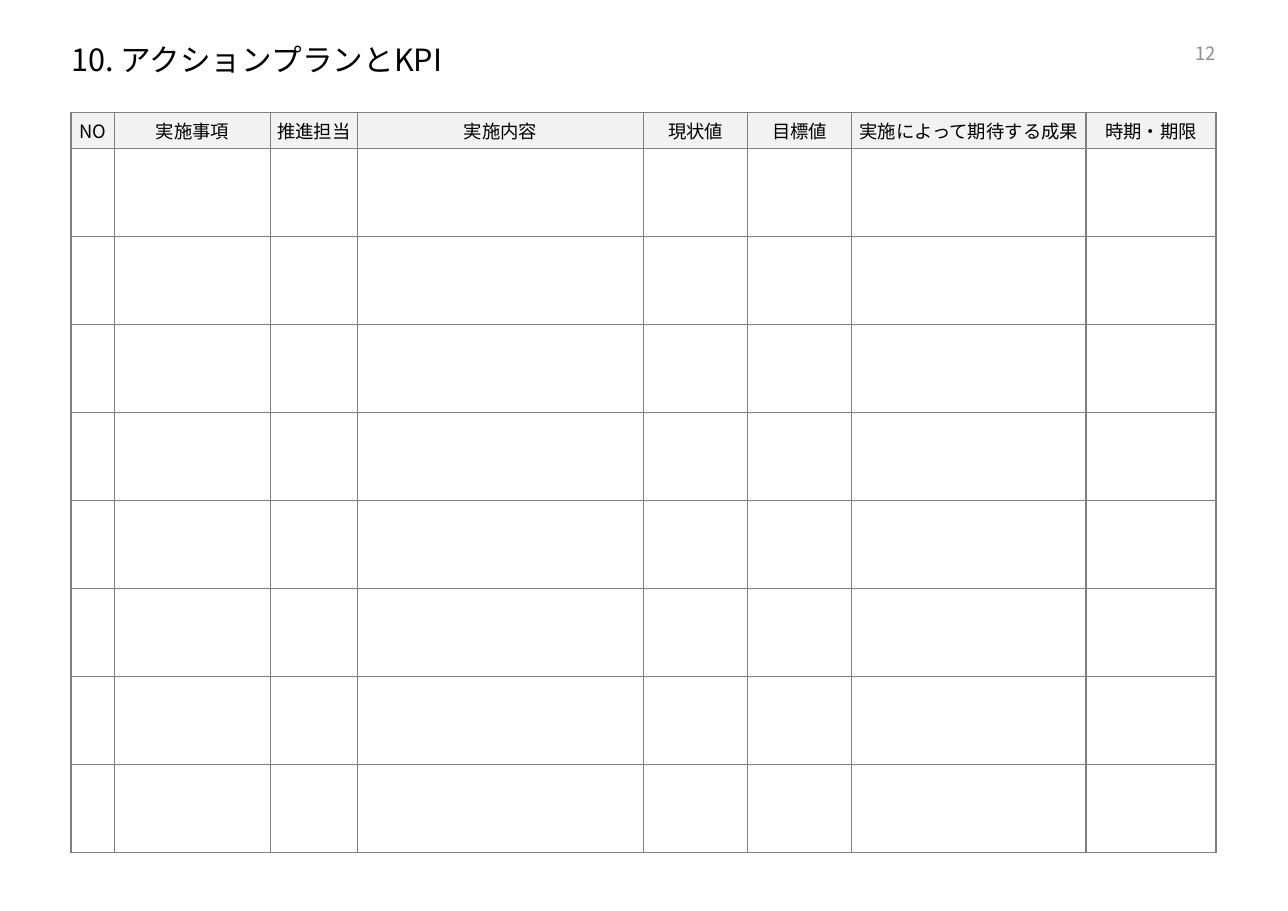
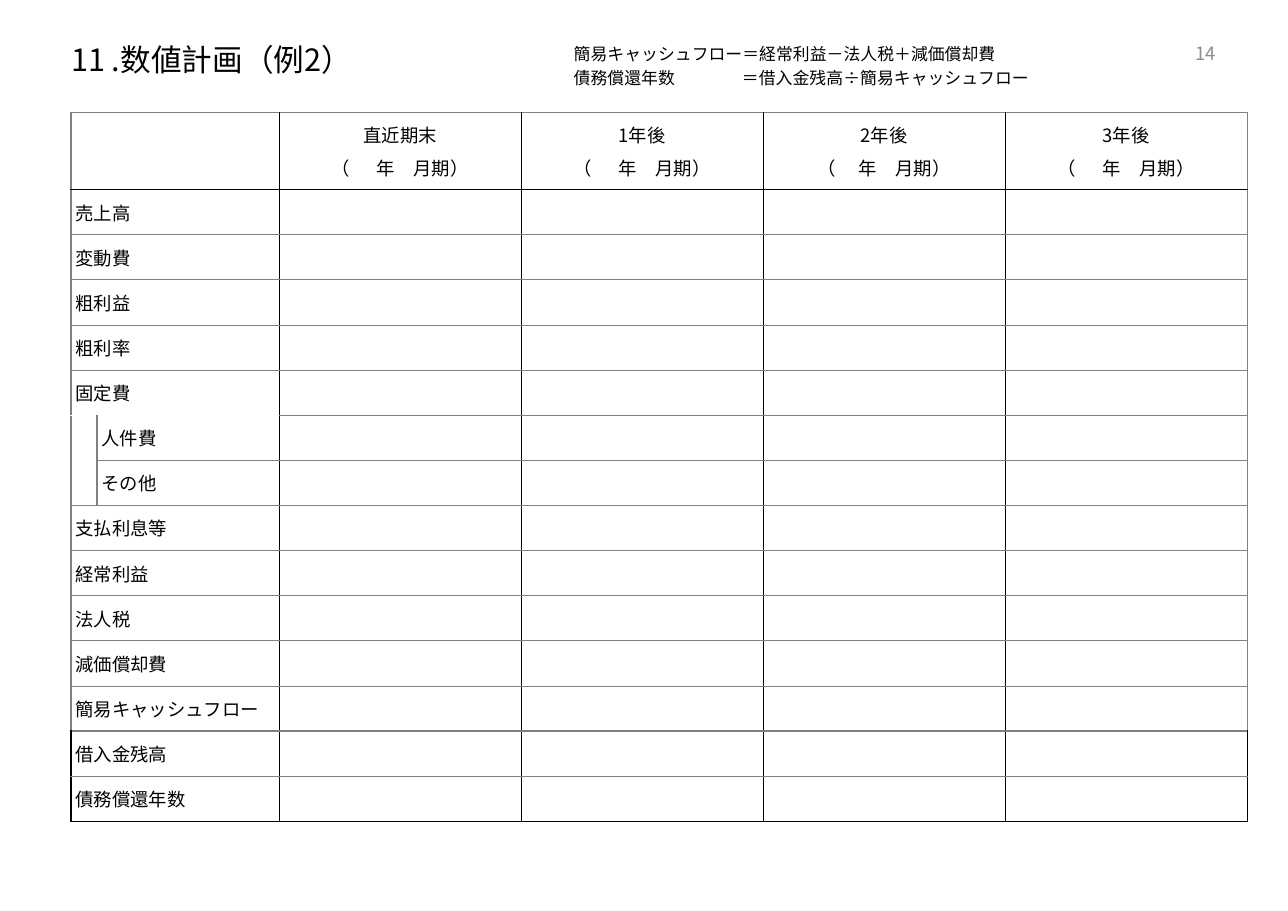
from dataclasses import dataclass

from lxml.etree import SubElement
from pptx import Presentation
from pptx.dml.color import RGBColor
from pptx.enum.text import MSO_ANCHOR as Anchor, MSO_AUTO_SIZE as AutoSize, PP_ALIGN as Align
from pptx.oxml.ns import qn
from pptx.util import Cm, Pt


@dataclass(frozen=True)
class Theme:
    font: str = "Noto Sans CJK JP"
    ink: str = "000000"
    grey: str = "808080"
    number: str = "8C8C8C"
    header: str = "F2F2F2"
    paper: str = "FFFFFF"
    title_size: float = 20
    body_size: float = 12
    note_size: float = 11
    leading: float = 0.85


@dataclass(frozen=True)
class Edge:
    color: str
    width: float = 1


THEME = Theme()
INK_EDGE = Edge(THEME.ink)
GREY_EDGE = Edge(THEME.grey)
THIN_EDGE = Edge(THEME.grey, 0.5)
PAPER_EDGE = Edge(THEME.paper)

LEFT, TABLE_TOP = 1.64, 2.6
CONTENT_WIDTH = 26.4

ACTION_COLUMNS = [
    ("NO", 1.0), ("実施事項", 3.6), ("推進担当", 2.0), ("実施内容", 6.6),
    ("現状値", 2.4), ("目標値", 2.4), ("実施によって期待する成果", 5.4), ("時期・期限", 3.0),
]
ACTION_ROWS = 8

PERIODS = [
    ("直近期末", "（　  年　月期）"),
    ("1年後", "（　  年　月期）"),
    ("2年後", "（　 年　月期）"),
    ("3年後", "（　  年　月期）"),
]
PLAN_ITEMS = [
    "売上高", "変動費", "粗利益", "粗利率", "固定費", "人件費", "その他", "支払利息等",
    "経常利益", "法人税", "減価償却費", "簡易キャッシュフロー", "借入金残高", "債務償還年数",
]
DETAIL_ROWS = (6, 7)
DEBT_ROWS = (13, 14)
PLAN_RULES = {0: GREY_EDGE, 1: INK_EDGE, 10: GREY_EDGE, 13: GREY_EDGE, 15: INK_EDGE}


def write_para(para, text, size, color=THEME.ink, align=Align.LEFT, after=0, leading=1.0):
    para.alignment = align
    para.space_before = Pt(0)
    para.space_after = Pt(after)
    para.line_spacing = leading
    run = para.add_run()
    run.text = text
    run.font.size = Pt(size)
    run.font.color.rgb = RGBColor.from_string(color)
    run.font.name = THEME.font
    SubElement(run._r.get_or_add_rPr(), qn("a:ea"), typeface=THEME.font)


def write_lines(frame, lines, size, **style):
    for index, text in enumerate(lines):
        para = frame.add_paragraph() if index else frame.paragraphs[0]
        write_para(para, text, size, **style)


def place_box(box, left, top, width, height, anchor=Anchor.MIDDLE):
    box.left, box.top, box.width, box.height = Cm(left), Cm(top), Cm(width), Cm(height)
    frame = box.text_frame
    frame.word_wrap = True
    frame.auto_size = AutoSize.NONE
    frame.vertical_anchor = anchor
    frame.margin_left = frame.margin_right = frame.margin_top = frame.margin_bottom = 0
    return frame


def add_page(deck, title, number):
    page = deck.slides.add_slide(deck.slide_layouts[5])
    frame = place_box(page.shapes.title, LEFT, 1.0, CONTENT_WIDTH, 0.88)
    write_lines(frame, [title], THEME.title_size, leading=THEME.leading)
    box = page.shapes.add_textbox(0, 0, 0, 0)
    frame = place_box(box, 21.1, 1.0, 6.94, 0.52)
    write_lines(frame, [number], THEME.body_size, color=THEME.number,
                align=Align.RIGHT, leading=THEME.leading)
    return page


def add_note(page, lines, tab):
    box = page.shapes.add_textbox(0, 0, 0, 0)
    frame = place_box(box, 13.23, 1.09, 16.46, 1.1, Anchor.TOP)
    write_lines(frame, lines, THEME.note_size, after=4.3, leading=THEME.leading)
    for para in frame.paragraphs:
        stops = SubElement(para._p.get_or_add_pPr(), qn("a:tabLst"))
        SubElement(stops, qn("a:tab"), pos=str(Cm(tab)), algn="l")


def add_grid(page, widths, heights):
    table = page.shapes.add_table(len(heights), len(widths), Cm(LEFT), Cm(TABLE_TOP),
                                  Cm(sum(widths)), Cm(sum(heights))).table
    table.first_row = table.horz_banding = False
    for column, width in zip(table.columns, widths):
        column.width = Cm(width)
    for row, height in zip(table.rows, heights):
        row.height = Cm(height)
    return table


def style_cell(cell, edges, fill=None):
    properties = cell._tc.get_or_add_tcPr()
    for side, edge in zip("LRTB", edges):
        line = SubElement(properties, qn(f"a:ln{side}"), w=str(Pt(edge.width)))
        SubElement(SubElement(line, qn("a:solidFill")), qn("a:srgbClr"), val=edge.color)
    if fill:
        cell.fill.solid()
        cell.fill.fore_color.rgb = RGBColor.from_string(fill)
    else:
        cell.fill.background()
    cell.margin_left = cell.margin_right = cell.margin_top = cell.margin_bottom = Cm(0.1)


def write_cell(cell, lines, anchor=Anchor.MIDDLE, **style):
    cell.vertical_anchor = anchor
    write_lines(cell.text_frame, lines, THEME.body_size, **style)


def size_empty_cells(table):
    for cell in table.iter_cells():
        if not cell.text_frame.text:
            SubElement(cell.text_frame.paragraphs[0]._p, qn("a:endParaRPr"),
                       sz=str(THEME.body_size * 100))


def add_action_table(page):
    names, widths = zip(*ACTION_COLUMNS)
    table = add_grid(page, widths, [0.82] + [2.03] * ACTION_ROWS)
    for row in range(ACTION_ROWS + 1):
        for column, name in enumerate(names):
            cell = table.cell(row, column)
            style_cell(cell, [GREY_EDGE] * 4, THEME.paper if row else THEME.header)
            if row == 0:
                write_cell(cell, [name], Anchor.TOP, align=Align.CENTER)
    size_empty_cells(table)


def plan_rule(line, column):
    if line == DETAIL_ROWS[0] and column < 2:
        return PAPER_EDGE
    return PLAN_RULES.get(line, THIN_EDGE)


def plan_edges(row, column, last):
    frame = INK_EDGE if row in DEBT_ROWS else GREY_EDGE
    left = {0: frame, 1: GREY_EDGE}.get(column, INK_EDGE)
    right = INK_EDGE
    if column == last:
        right = frame
    elif column == 0 and row in DETAIL_ROWS:
        right = GREY_EDGE
    return left, right, plan_rule(row, column), plan_rule(row + 1, column)


def add_plan_table(page):
    widths = [0.6, 4.2] + [5.58] * len(PERIODS)
    heights = [1.77] + [1.04] * len(PLAN_ITEMS)
    table = add_grid(page, widths, heights)
    for row in range(len(heights)):
        for column in range(len(widths)):
            style_cell(table.cell(row, column), plan_edges(row, column, len(widths) - 1))
        if row not in DETAIL_ROWS:
            table.cell(row, 0).merge(table.cell(row, 1))
    table.cell(DETAIL_ROWS[0], 0).merge(table.cell(DETAIL_ROWS[-1], 0))
    for column, period in enumerate(PERIODS, 2):
        cell = table.cell(0, column)
        cell.margin_left = cell.margin_right = 0
        write_cell(cell, period, align=Align.CENTER, after=4)
    for row, item in enumerate(PLAN_ITEMS, 1):
        cell = table.cell(row, 1 if row in DETAIL_ROWS else 0)
        cell.margin_right = 0
        write_cell(cell, [item])
    size_empty_cells(table)


def main():
    deck = Presentation()
    deck.slide_width, deck.slide_height = Cm(29.7), Cm(21)

    add_action_table(add_page(deck, "10. アクションプランとKPI", "12"))

    page = add_page(deck, "11 .数値計画（例2）", "14")
    add_plan_table(page)
    add_note(page, [
        "簡易キャッシュフロー＝経常利益－法人税＋減価償却費",
        "債務償還年数\t＝借入金残高÷簡易キャッシュフロー",
    ], 3.88)

    deck.save("out.pptx")


if __name__ == "__main__":
    main()
